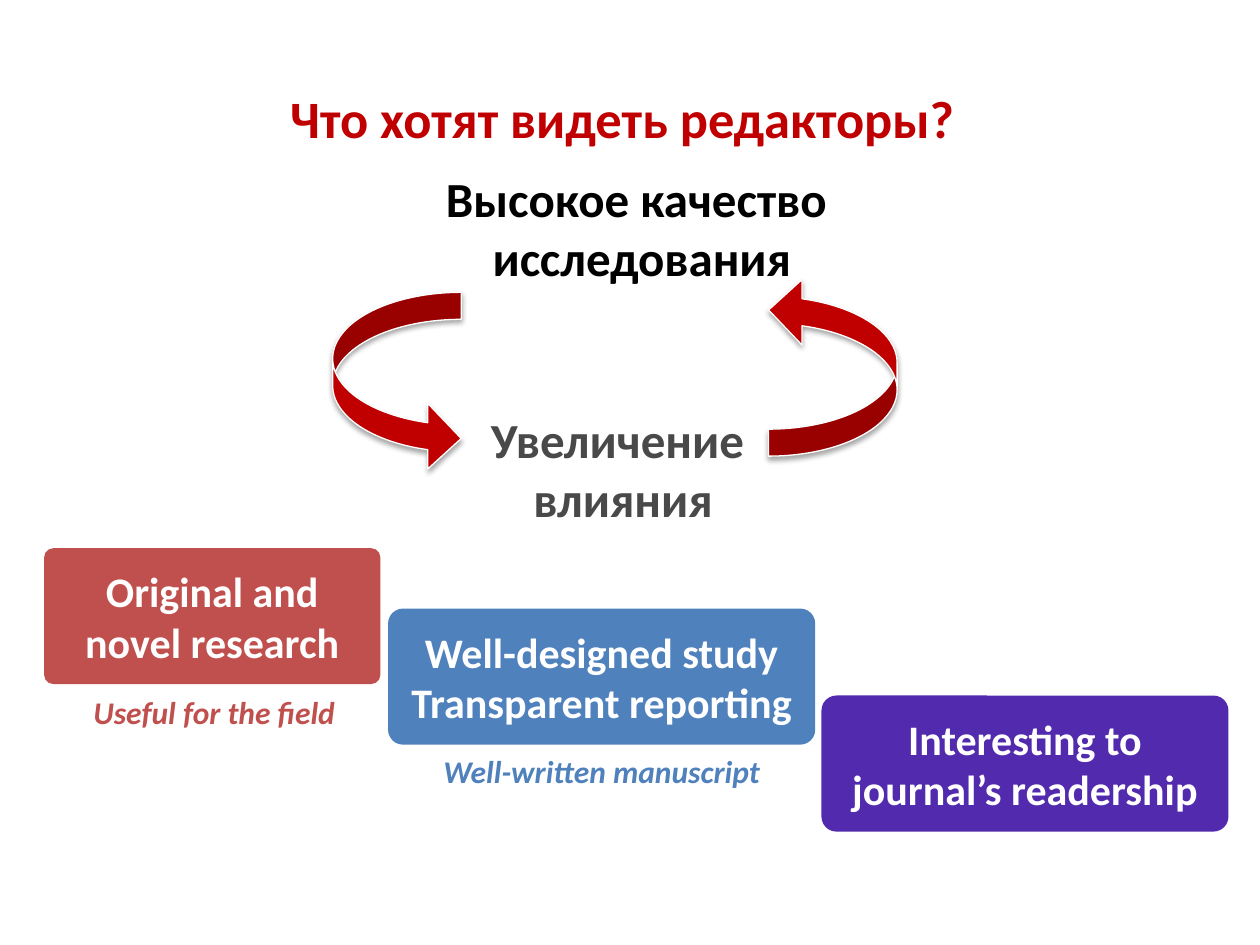
from dataclasses import dataclass

from lxml import etree
from pptx import Presentation
from pptx.dml.color import RGBColor
from pptx.enum import shapes as sh, text as tx
from pptx.oxml import ns
from pptx.util import Inches, Pt


@dataclass(frozen=True)
class Theme:
    font: str = "Calibri"
    red: str = "C00000"
    black: str = "000000"
    gray: str = "494949"
    white: str = "FFFFFF"
    rose: str = "C0504D"
    blue: str = "4F81BD"
    violet: str = "512AAD"
    title: int = 30
    head: int = 28
    card: int = 24
    note: int = 18


@dataclass(frozen=True)
class Box:
    left: float
    top: float
    width: float
    height: float

    def emu(self) -> tuple:
        return tuple(Inches(v) for v in (self.left, self.top, self.width, self.height))


@dataclass(frozen=True)
class Label:
    box: Box
    lines: tuple
    color: str
    size: int
    wrap: bool = True
    italic: bool = False


@dataclass(frozen=True)
class Card:
    box: Box
    lines: tuple
    fill: str
    round: float


@dataclass(frozen=True)
class Arrow:
    box: Box
    turn: int


T = Theme()
TITLE = Label(Box(0.49, 0.68, 8.9, 0.5), ("Что хотят видеть редакторы?",), T.red, T.title)
LABELS = (
    Label(Box(3.78, 3.2, 2.33, 1.04), ("Увеличение ", "влияния"), T.gray, T.head, wrap=False),
    Label(Box(3.42, 1.29, 3.26, 1.04), ("Высокое качество", " исследования"),
          T.black, T.head, wrap=False),
    Label(Box(0.36, 5.45, 2.68, 0.4), ("Useful for the field",), T.rose, T.note, italic=True),
    Label(Box(3.08, 5.92, 3.39, 0.4), ("Well-written manuscript",), T.blue, T.note, italic=True),
)
CARDS = (
    Card(Box(6.52, 5.52, 3.23, 1.08), ("Interesting to journal’s readership",), T.violet, 0.11),
    Card(Box(0.35, 4.35, 2.67, 1.08), ("Original and novel research",), T.rose, 0.07),
    Card(Box(3.08, 4.83, 3.39, 1.08), ("Well-designed study", "Transparent reporting"),
         T.blue, 0.11),
)
ARROWS = (Arrow(Box(2.64, 2.32, 1.02, 1.42), 0), Arrow(Box(6.1, 2.2, 1.02, 1.42), 180))
BENDS = (0.21, 0.51, 0.26)


def write(frame, lines: tuple, color: str, size: int, italic: bool = False) -> None:
    """Fill a text frame with centred bold lines."""
    style = {"name": T.font, "size": Pt(size), "bold": True, "italic": italic}
    for i, line in enumerate(lines):
        para = frame.add_paragraph() if i else frame.paragraphs[0]
        para.alignment = tx.PP_ALIGN.CENTER
        run = para.add_run()
        run.text = line
        for key, val in style.items():
            setattr(run.font, key, val)
        run.font.color.rgb = RGBColor.from_string(color)


def paint(shape, color: str) -> None:
    shape.shadow.inherit = False
    shape.fill.solid()
    shape.fill.fore_color.rgb = RGBColor.from_string(color)


def draw_title(slide, label: Label) -> None:
    shape = slide.shapes.title
    shape.left, shape.top, shape.width, shape.height = label.box.emu()
    frame = shape.text_frame
    for side in ("left", "top", "right", "bottom"):
        setattr(frame, f"margin_{side}", 0)
    frame.auto_size = tx.MSO_AUTO_SIZE.SHAPE_TO_FIT_TEXT
    write(frame, label.lines, label.color, label.size)


def draw_label(slide, label: Label) -> None:
    frame = slide.shapes.add_textbox(*label.box.emu()).text_frame
    frame.word_wrap = label.wrap
    frame.auto_size = tx.MSO_AUTO_SIZE.SHAPE_TO_FIT_TEXT
    write(frame, label.lines, label.color, label.size, label.italic)


def draw_card(slide, card: Card) -> None:
    shape = slide.shapes.add_shape(sh.MSO_SHAPE.ROUNDED_RECTANGLE, *card.box.emu())
    shape.adjustments[0] = card.round
    paint(shape, card.fill)
    shape.line.fill.background()
    shape.text_frame.vertical_anchor = tx.MSO_ANCHOR.MIDDLE
    write(shape.text_frame, card.lines, T.white, T.card)


def draw_arrow(slide, arrow: Arrow) -> None:
    shape = slide.shapes.add_shape(sh.MSO_SHAPE.CURVED_RIGHT_ARROW, *arrow.box.emu())
    shape.rotation = arrow.turn
    for i, bend in enumerate(BENDS):
        shape.adjustments[i] = bend
    paint(shape, T.red)
    shape.line.color.rgb = RGBColor.from_string(T.white)
    shape.line.width = Pt(0.75)
    # Soft shadow straight below
    effects = shape._element.spPr.find(ns.qn("a:effectLst"))
    shade = etree.SubElement(effects, ns.qn("a:outerShdw"), blurRad=str(Pt(3.1)),
                             dist=str(Pt(1.8)), dir="5400000", rotWithShape="0")
    tint = etree.SubElement(shade, ns.qn("a:srgbClr"), val=T.black)
    etree.SubElement(tint, ns.qn("a:alpha"), val="35000")


def main() -> None:
    deck = Presentation()
    deck.slide_width, deck.slide_height = Inches(10), Inches(7.5)
    slide = deck.slides.add_slide(deck.slide_layouts[5])
    draw_title(slide, TITLE)
    # Cycle of quality and impact, then the cards
    for draw, parts in ((draw_label, LABELS), (draw_card, CARDS), (draw_arrow, ARROWS)):
        for part in parts:
            draw(slide, part)
    deck.save("out.pptx")


if __name__ == "__main__":
    main()
